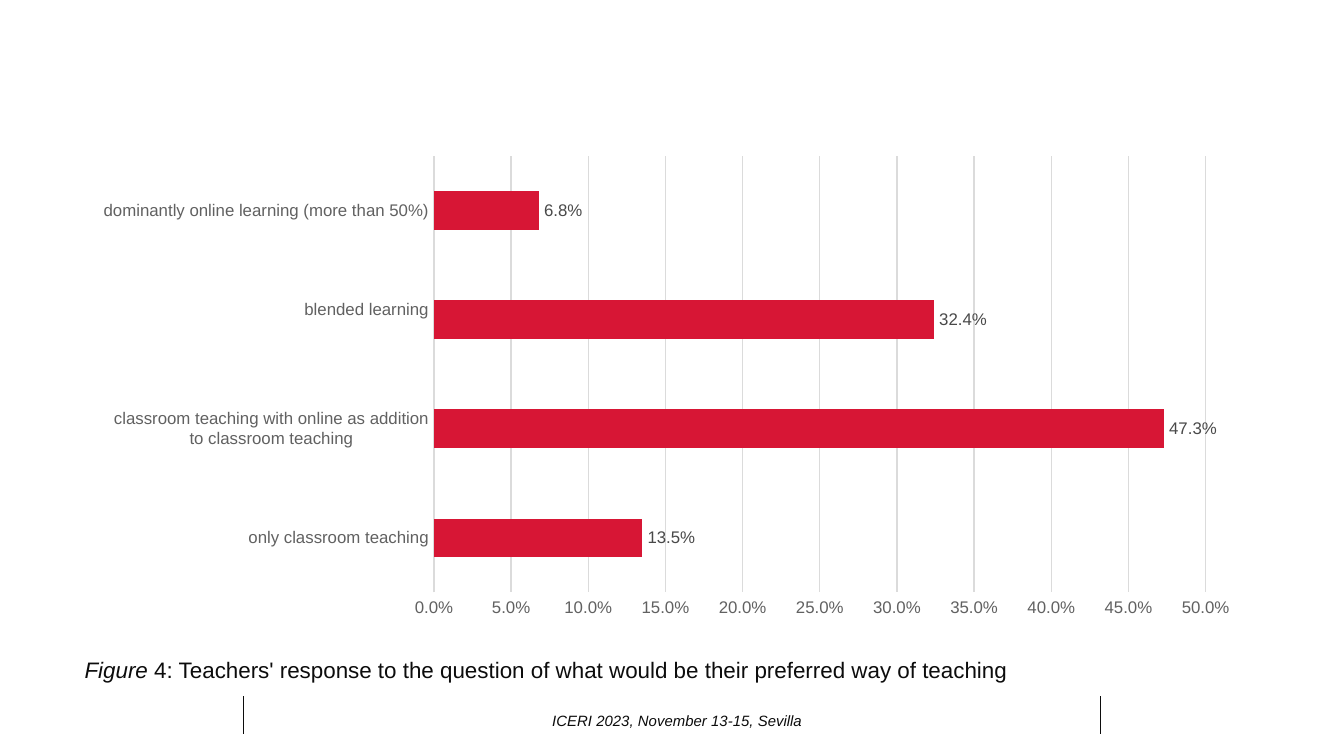
"""Build the slide on teachers' preferred way of teaching."""
from dataclasses import dataclass

from lxml import etree
from pptx import Presentation
from pptx.chart.data import CategoryChartData
from pptx.dml.color import RGBColor
from pptx.enum import chart as charts, shapes, text
from pptx.oxml import ns
from pptx.util import Pt

COLOURS = {"ink": "0C0C0C", "axis": "616161", "label": "494949",
           "grid": "DBDBDB", "bar": "D71635"}
FONT = "Arial"
PERCENT = "0.0%"


@dataclass
class Box:
    left: float
    top: float
    width: float
    height: float

    def lengths(self) -> tuple:
        return Pt(self.left), Pt(self.top), Pt(self.width), Pt(self.height)


@dataclass
class Run:
    words: str
    italic: bool = False


@dataclass
class Answer:
    label: str
    share: float


ANSWERS = [
    Answer("only classroom teaching", 0.135),
    Answer("classroom teaching with online as addition\nto classroom teaching", 0.473),
    Answer("blended learning\n ", 0.324),
    Answer("dominantly online learning (more than 50%)", 0.068),
]
PLOT = {"x": 0.3, "y": 0.02, "w": 0.66, "h": 0.91}


def colour(name: str) -> RGBColor:
    return RGBColor.from_string(COLOURS[name])


def format_font(font, size: float, name: str, italic: bool = False) -> None:
    font.name = FONT
    font.size = Pt(size)
    font.italic = italic
    font.color.rgb = colour(name)


def format_line(line, name: str, width: float) -> None:
    line.color.rgb = colour(name)
    line.width = Pt(width)


def add_text(slide, box: Box, runs: list[Run], *, size: float,
             align=text.PP_ALIGN.LEFT, anchor=text.MSO_ANCHOR.TOP,
             auto_size=text.MSO_AUTO_SIZE.NONE) -> None:
    frame = slide.shapes.add_textbox(*box.lengths()).text_frame
    frame.word_wrap = True
    frame.auto_size = auto_size
    frame.vertical_anchor = anchor
    paragraph = frame.paragraphs[0]
    paragraph.alignment = align
    for part in runs:
        run = paragraph.add_run()
        run.text = part.words
        format_font(run.font, size, "ink", part.italic)


def add_rule(slide, x: float, top: float, bottom: float) -> None:
    rule = slide.shapes.add_connector(
        shapes.MSO_CONNECTOR.STRAIGHT, Pt(x), Pt(top), Pt(x), Pt(bottom))
    format_line(rule.line, "ink", 0.5)
    etree.SubElement(rule._element.spPr, ns.qn("a:effectLst"))


def place_plot(chart) -> None:
    area = chart._chartSpace.chart.plotArea
    for old in area.findall(ns.qn("c:layout")):
        area.remove(old)
    layout = etree.Element(ns.qn("c:layout"))
    manual = etree.SubElement(layout, ns.qn("c:manualLayout"))
    settings = {"layoutTarget": "inner", "xMode": "edge", "yMode": "edge", **PLOT}
    for tag, value in settings.items():
        etree.SubElement(manual, ns.qn(f"c:{tag}")).set("val", str(value))
    area.insert(0, layout)


def add_answers_chart(slide, box: Box, answers: list[Answer]) -> None:
    data = CategoryChartData(number_format=PERCENT)
    data.categories = [answer.label for answer in answers]
    data.add_series("Series 1", [answer.share for answer in answers])
    chart = slide.shapes.add_chart(
        charts.XL_CHART_TYPE.BAR_CLUSTERED, *box.lengths(), data).chart
    chart.has_legend = False
    chart.has_title = False
    format_font(chart.font, 10, "ink")
    place_plot(chart)

    for axis in (chart.category_axis, chart.value_axis):
        axis.major_tick_mark = axis.minor_tick_mark = charts.XL_TICK_MARK.NONE
        format_font(axis.tick_labels.font, 9, "axis")
    chart.category_axis.has_major_gridlines = False
    format_line(chart.category_axis.format.line, "grid", 0.75)

    values = chart.value_axis
    values.minimum_scale, values.maximum_scale, values.major_unit = 0, 0.5, 0.05
    values.tick_labels.number_format = PERCENT
    values.tick_labels.number_format_is_linked = False
    values.format.line.fill.background()
    values.has_major_gridlines = True
    format_line(values.major_gridlines.format.line, "grid", 0.75)

    plot = chart.plots[0]
    plot.gap_width = 182
    plot.vary_by_categories = False
    series = plot.series[0]
    series.format.fill.solid()
    series.format.fill.fore_color.rgb = colour("bar")
    labels = series.data_labels
    labels.show_value = True
    labels.position = charts.XL_LABEL_POSITION.OUTSIDE_END
    labels.number_format = PERCENT
    labels.number_format_is_linked = False
    format_font(labels.font, 9, "label")


def main() -> None:
    presentation = Presentation()
    presentation.slide_width = Pt(720)
    presentation.slide_height = Pt(405)
    slide = presentation.slides.add_slide(presentation.slide_layouts[6])
    for x in (130.3, 589.7):
        add_rule(slide, x, 373, 393)
    add_text(slide, Box(161.3, 375.1, 403.2, 21.6),
             [Run("ICERI 2023, November 13-15, Sevilla", italic=True)],
             size=8, align=text.PP_ALIGN.CENTER, anchor=text.MSO_ANCHOR.MIDDLE)
    add_text(slide, Box(38.2, 347.8, 619.9, 21.6),
             [Run("Figure", italic=True),
              Run(" 4: Teachers' response to the question of what would be "
                  "their preferred way of teaching")],
             size=12, auto_size=text.MSO_AUTO_SIZE.SHAPE_TO_FIT_TEXT)
    add_answers_chart(slide, Box(44.6, 78.5, 626.4, 257), ANSWERS)
    presentation.save("out.pptx")


if __name__ == "__main__":
    main()
